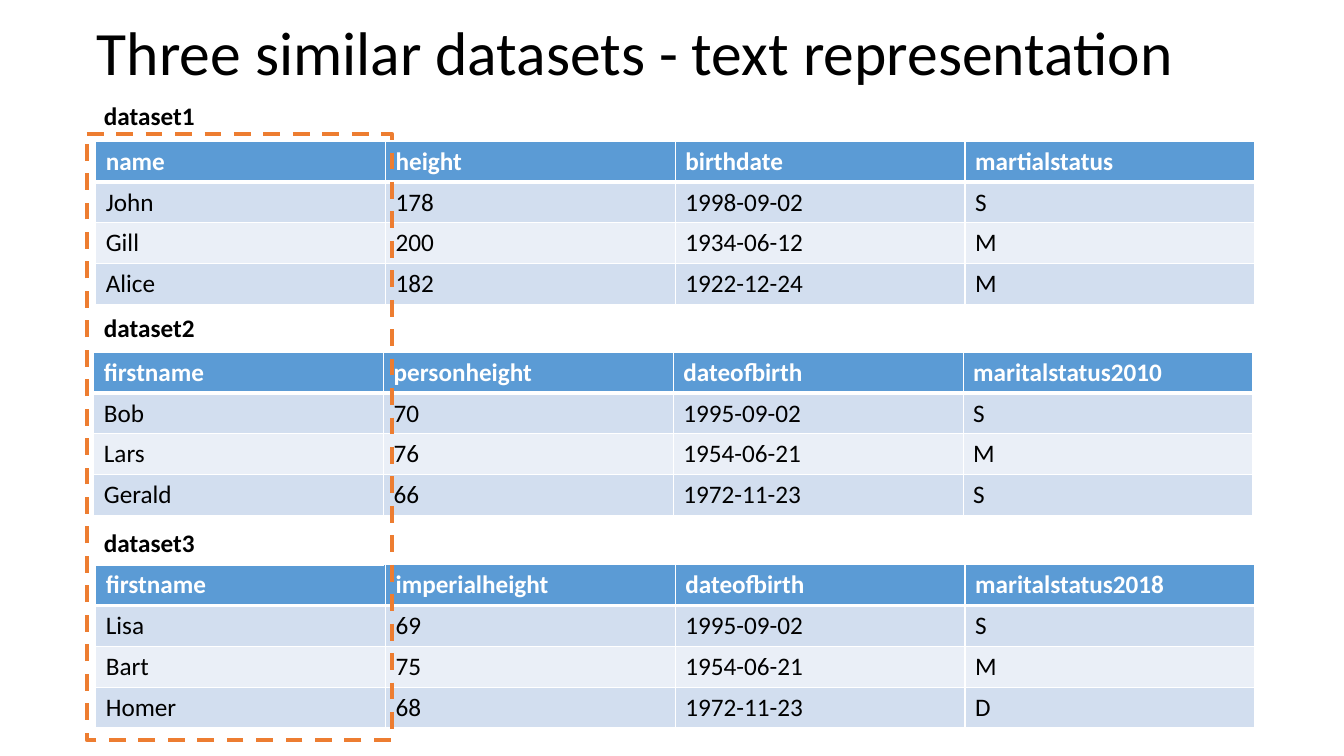
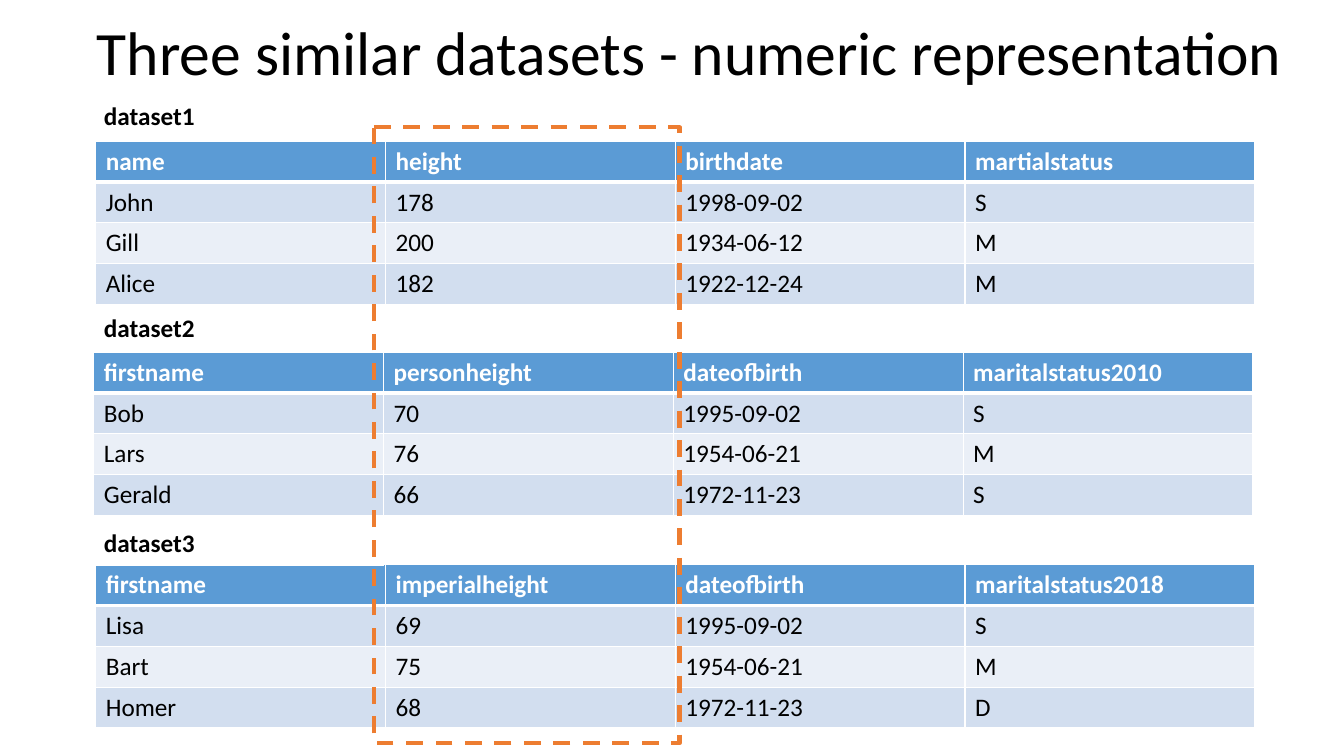
from lxml import etree
from pptx import Presentation
from pptx import util as u
from pptx.dml.color import RGBColor
from pptx.enum import dml, shapes, text
from pptx.oxml.ns import qn

Pt = u.Pt

COLORS = {
    "text": "000000",
    "white": "FFFFFF",
    "header": "5B9BD5",
    "odd_row": "D2DEEF",
    "even_row": "EAEFF7",
    "frame": "ED7D31",
}
FONT = "Calibri"
COLUMN_WIDTH, ROW_HEIGHT = 207, 29.2
LABEL_LEFT = 67

DATASETS = [
    {
        "label": "dataset1", "label_top": 69.2, "left": 68.4, "top": 100.8,
        "rows": [
            ("name", "height", "birthdate", "martialstatus"),
            ("John", "178", "1998-09-02", "S"),
            ("Gill", "200", "1934-06-12", "M"),
            ("Alice", "182", "1922-12-24", "M"),
        ],
    },
    {
        "label": "dataset2", "label_top": 220.3, "left": 67, "top": 251.5,
        "rows": [
            ("firstname", "personheight", "dateofbirth", "maritalstatus2010"),
            ("Bob", "70", "1995-09-02", "S"),
            ("Lars", "76", "1954-06-21", "M"),
            ("Gerald", "66", "1972-11-23", "S"),
        ],
    },
    {
        "label": "dataset3", "label_top": 373.7, "left": 68.4, "top": 403.2,
        "rows": [
            ("firstname", "imperialheight", "dateofbirth", "maritalstatus2018"),
            ("Lisa", "69", "1995-09-02", "S"),
            ("Bart", "75", "1954-06-21", "M"),
            ("Homer", "68", "1972-11-23", "D"),
        ],
    },
]

SLIDES = [
    {
        "title": "Three similar datasets - text representation",
        "title_width": 828,
        "frame": (62, 95.8, 218.2, 432.7),
    },
    {
        "title": "Three similar datasets - numeric representation",
        "title_width": 883.4,
        "frame": (267.1, 90.9, 218.2, 439.9),
    },
]


def color(name):
    return RGBColor.from_string(COLORS[name])


def write(text_frame, content, size=18, font_color="text", bold=False, spacing=None):
    paragraph = text_frame.paragraphs[0]
    paragraph.alignment = text.PP_ALIGN.LEFT
    paragraph.line_spacing = spacing
    run = paragraph.add_run()
    run.text = content
    run.font.name = FONT
    run.font.size = Pt(size)
    run.font.bold = bold
    run.font.color.rgb = color(font_color)


def add_borders(cell, bottom_width):
    properties = cell._tc.get_or_add_tcPr()
    for side, width in (("L", 1), ("R", 1), ("T", 1), ("B", bottom_width)):
        line = etree.SubElement(properties, qn(f"a:ln{side}"), w=str(Pt(width)))
        fill = etree.SubElement(line, qn("a:solidFill"))
        etree.SubElement(fill, qn("a:srgbClr"), val=COLORS["white"])


def add_grid(slide, rows, left, top, fills, header_color):
    row_count, column_count = len(rows), len(rows[0])
    table = slide.shapes.add_table(
        row_count, column_count, Pt(left), Pt(top),
        Pt(column_count * COLUMN_WIDTH), Pt(row_count * ROW_HEIGHT),
    ).table
    table.first_row = row_count > 1
    table.horz_banding = row_count > 1
    for row_index, row in enumerate(rows):
        is_header = row_index == 0
        for column_index, content in enumerate(row):
            cell = table.cell(row_index, column_index)
            add_borders(cell, 3 if is_header else 1)
            if fills[row_index]:
                cell.fill.solid()
                cell.fill.fore_color.rgb = color(fills[row_index])
            else:
                cell.fill.background()
            write(cell.text_frame, content, bold=is_header,
                  font_color=header_color if is_header else "text")


def add_title(slide, content, width):
    title = slide.shapes.title
    title.left, title.top = Pt(62), Pt(-12.2)
    title.width, title.height = Pt(width), Pt(104.4)
    title.text_frame.word_wrap = True
    title.text_frame.auto_size = text.MSO_AUTO_SIZE.NONE
    title.text_frame.vertical_anchor = text.MSO_ANCHOR.MIDDLE
    write(title.text_frame, content, size=44, spacing=0.9)


def add_frame(slide, bounds):
    frame = slide.shapes.add_shape(
        shapes.MSO_SHAPE.ROUNDED_RECTANGLE, *(Pt(length) for length in bounds))
    frame.adjustments[0] = 0
    frame.shadow.inherit = False
    frame.fill.background()
    frame.line.color.rgb = color("frame")
    frame.line.width = Pt(3)
    frame.line.dash_style = dml.MSO_LINE.DASH


def main():
    presentation = Presentation()
    presentation.slide_width, presentation.slide_height = Pt(960), Pt(540)
    data_fills = ["header", "odd_row", "even_row", "odd_row"]
    for content in SLIDES:
        slide = presentation.slides.add_slide(presentation.slide_layouts[5])
        add_title(slide, content["title"], content["title_width"])
        for dataset in DATASETS:
            add_grid(slide, dataset["rows"], dataset["left"], dataset["top"],
                     data_fills, "white")
            add_grid(slide, [(dataset["label"],)], LABEL_LEFT, dataset["label_top"],
                     [None], "text")
        add_frame(slide, content["frame"])
    presentation.save("out.pptx")


if __name__ == "__main__":
    main()
